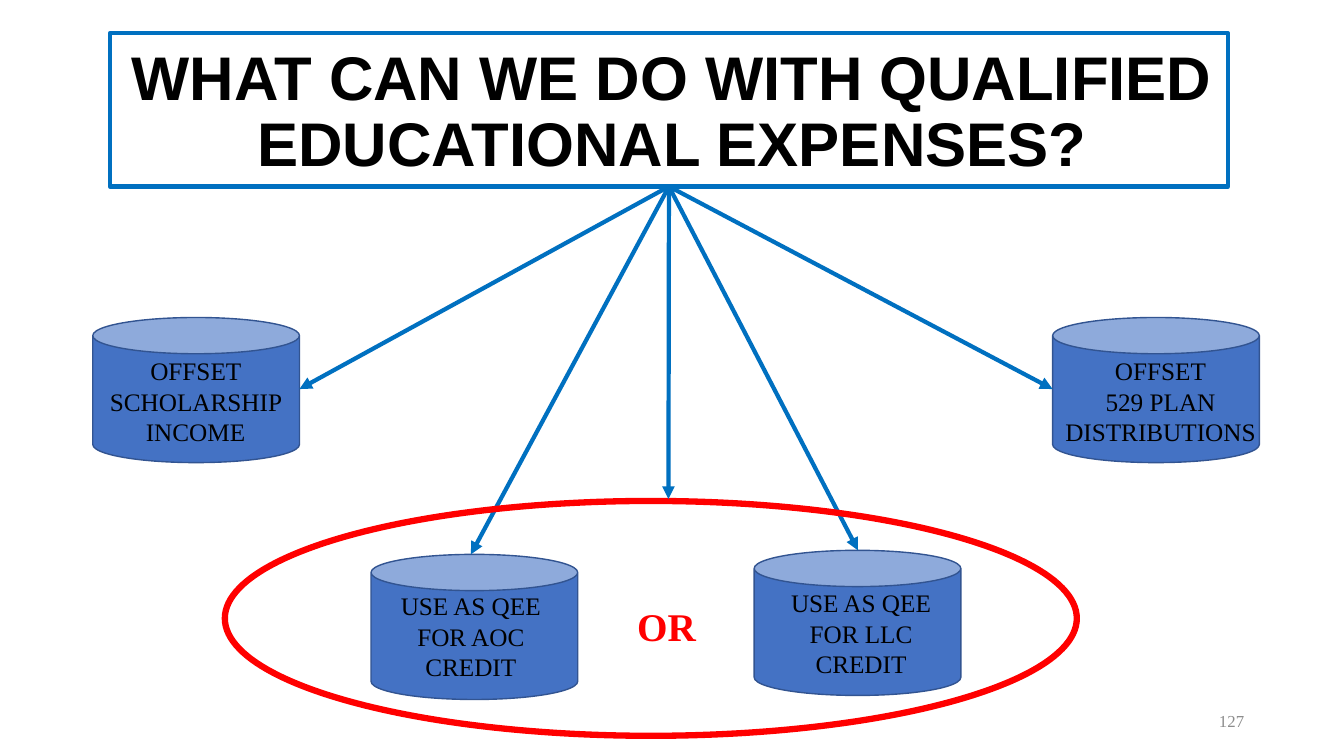
"""Build the slide on uses of qualified educational expenses."""
from typing import NamedTuple

from lxml import etree
from pptx import Presentation
from pptx.dml.color import RGBColor
from pptx.enum.shapes import MSO_CONNECTOR, MSO_SHAPE
from pptx.enum.text import MSO_ANCHOR, PP_ALIGN
from pptx.oxml.ns import qn
from pptx.util import Inches, Pt

STRAIGHT = MSO_CONNECTOR.STRAIGHT
CAN, OVAL, RECT = MSO_SHAPE.CAN, MSO_SHAPE.OVAL, MSO_SHAPE.RECTANGLE
TOP, MIDDLE = MSO_ANCHOR.TOP, MSO_ANCHOR.MIDDLE
LEFT, CENTER, RIGHT = PP_ALIGN.LEFT, PP_ALIGN.CENTER, PP_ALIGN.RIGHT

BLACK = RGBColor(0x00, 0x00, 0x00)
GRAY = RGBColor(0x8C, 0x8C, 0x8C)
RED = RGBColor(0xFF, 0x00, 0x00)
BLUE = RGBColor(0x00, 0x70, 0xC0)
CAN_FILL = RGBColor(0x44, 0x72, 0xC4)
CAN_LINE = RGBColor(0x32, 0x54, 0x91)
SERIF = "Times New Roman"
CAN_W, CAN_H = 2.05, 1.44


class Box(NamedTuple):
    left: float
    top: float
    width: float
    height: float

    def inches(self):
        return [Inches(v) for v in self]


class Use(NamedTuple):
    left: float
    top: float
    label: Box
    text: str
    tip: tuple[float, float]


USES = [
    Use(0.92, 3.15, Box(0.99, 3.48, 1.9, 1.01),
        "OFFSET SCHOLARSHIP INCOME", (0.92 + CAN_W, 3.86)),
    Use(3.68, 5.5, Box(3.72, 5.81, 1.9, 1.01),
        "USE AS QEE FOR AOC CREDIT", (4.67, 5.5)),
    Use(7.48, 5.46, Box(7.59, 5.78, 1.9, 1.01),
        "USE AS QEE FOR LLC CREDIT", (8.51, 5.46)),
    Use(10.44, 3.15, Box(10.44, 3.48, 2.14, 1.01),
        "OFFSET\n529 PLAN DISTRIBUTIONS", (10.44, 3.86)),
]


def add_shape(s, kind, box: Box, line: RGBColor, width: float, fill=None):
    sp = s.shapes.add_shape(kind, *box.inches())
    sp.shadow.inherit = False
    if fill is None:
        sp.fill.background()
    else:
        sp.fill.solid()
        sp.fill.fore_color.rgb = fill
    sp.line.color.rgb = line
    sp.line.width = Pt(width)
    return sp


def set_font(p, name: str, size: int, color: RGBColor, bold: bool = False) -> None:
    p.font.name, p.font.size, p.font.bold = name, Pt(size), bold
    p.font.color.rgb = color


def add_text(s, box: Box, text: str, size: int, color: RGBColor,
             align=CENTER, anchor=TOP, bold: bool = False) -> None:
    tf = s.shapes.add_textbox(*box.inches()).text_frame
    tf.word_wrap = True
    tf.margin_left = tf.margin_right = Inches(0.08)
    tf.vertical_anchor = anchor
    tf.text = text
    for p in tf.paragraphs:
        p.alignment = align
        set_font(p, SERIF, size, color, bold)


def add_arrow(s, frame, tip: tuple[float, float]) -> None:
    x, y = (Inches(v) for v in tip)
    cx = s.shapes.add_connector(STRAIGHT, x, y, x, y)
    cx.begin_connect(frame, 2)
    cx.line.color.rgb = BLUE
    cx.line.width = Pt(3)
    etree.SubElement(cx.line._get_or_add_ln(), qn("a:tailEnd"), type="triangle")
    etree.SubElement(cx._element.spPr, qn("a:effectLst"))


def add_title(s, box: Box, text: str) -> None:
    sp = s.shapes.title
    sp.left, sp.top, sp.width, sp.height = box.inches()
    tf = sp.text_frame
    tf.word_wrap = True
    tf.vertical_anchor = MIDDLE
    tf.text = text
    p = tf.paragraphs[0]
    p.alignment = CENTER
    p.line_spacing = 0.9
    set_font(p, "Arial", 44, BLACK, True)


def main() -> None:
    prs = Presentation()
    prs.slide_width, prs.slide_height = Inches(13.33), Inches(7.5)
    s = prs.slides.add_slide(prs.slide_layouts[5])
    add_title(s, Box(0.92, 0.4, 11.5, 1.45),
              "WHAT CAN WE DO WITH QUALIFIED EDUCATIONAL EXPENSES?")
    add_text(s, Box(9.42, 6.95, 3, 0.4), "127", 12, GRAY, RIGHT, MIDDLE)
    frame = add_shape(s, RECT, Box(1.09, 0.33, 11.09, 1.52), BLUE, 3)
    for use in USES:
        add_shape(s, CAN, Box(use.left, use.top, CAN_W, CAN_H), CAN_LINE, 1, CAN_FILL)
        add_text(s, use.label, use.text, 18, BLACK)
        add_arrow(s, frame, use.tip)
    add_text(s, Box(6.24, 5.93, 0.79, 0.57), "OR", 28, RED, LEFT, bold=True)
    add_shape(s, OVAL, Box(2.23, 4.97, 8.45, 2.33), RED, 4.5)
    add_arrow(s, frame, (6.63, 4.95))
    prs.save("out.pptx")


if __name__ == "__main__":
    main()
